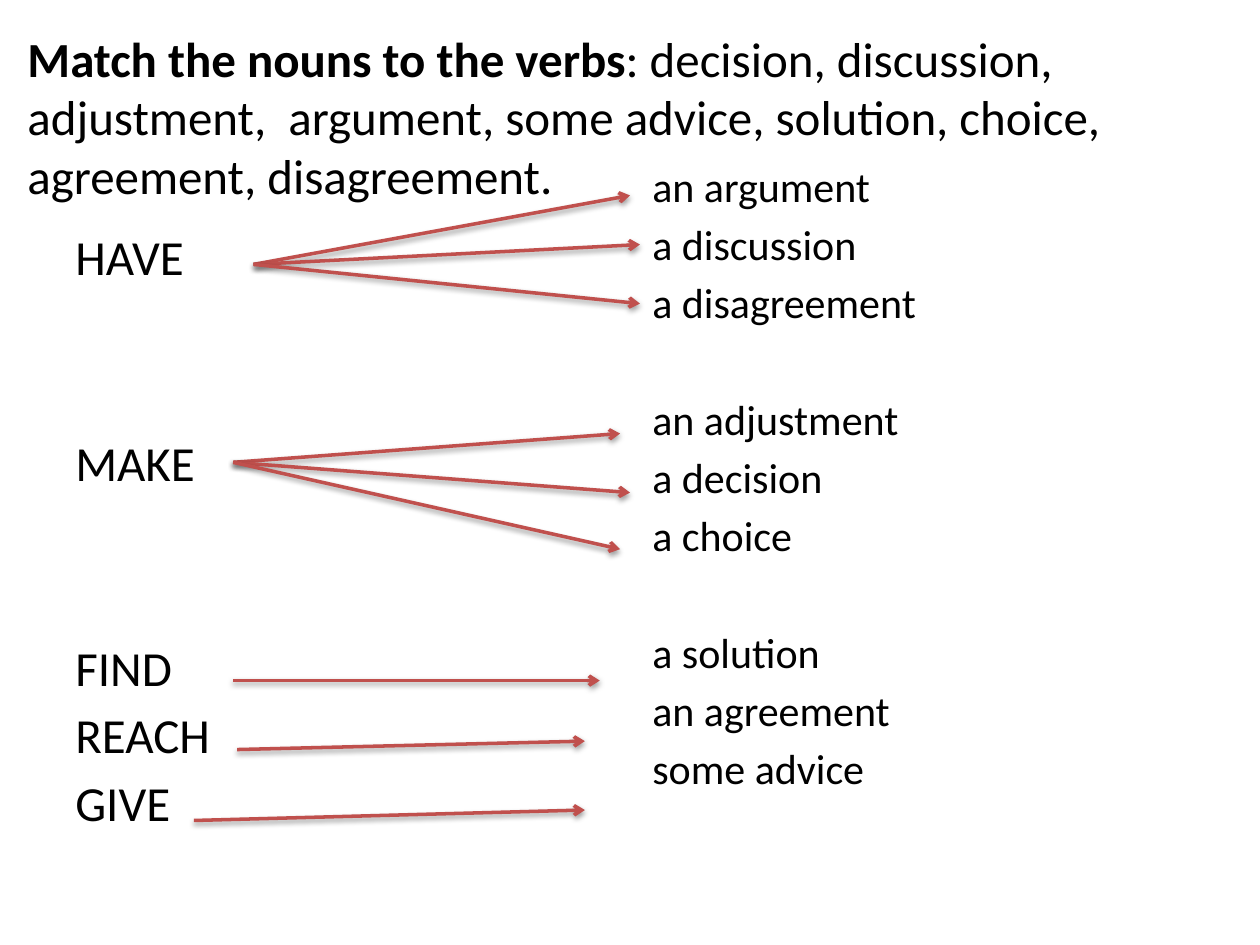
from lxml import etree
from pptx import Presentation
from pptx import util as u
from pptx.dml.color import RGBColor
from pptx.enum import shapes, text
from pptx.oxml import ns

BLACK = RGBColor(0x00, 0x00, 0x00)
RED = RGBColor(0xC0, 0x50, 0x4D)
FONT = "Calibri"
LINE_HEIGHT = 1.22  # Calibri line height relative to its size

TITLE_LEAD = "Match the nouns to the verbs"
TITLE_REST = (": decision, discussion, adjustment,  argument, some advice, "
              "solution, choice, agreement, disagreement.")

# Each inner list is a group; groups are set apart by empty line slots
VERBS = [["HAVE"], ["MAKE"], ["FIND", "REACH", "GIVE"]]
NOUNS = [["an argument", "a discussion", "a disagreement"],
         ["an adjustment", "a decision", "a choice"],
         ["a solution", "an agreement", "some advice"]]

# Start of each fan of arrows and its tips, in cm
ARROWS = [
    ((5.11, 5.33), [(12.7, 3.94), (12.9, 4.93), (12.9, 6.12)]),
    ((4.7, 9.32), [(12.5, 8.74), (12.7, 9.93), (12.5, 11.07)]),
    ((4.7, 13.72), [(12.09, 13.72)]),
    ((4.78, 15.11), [(11.79, 14.94)]),
    ((3.91, 16.54), [(11.79, 16.33)]),
]


def format_span(span, size, bold=False):
    span.font.name = FONT
    span.font.size = u.Pt(size)
    span.font.bold = bold
    span.font.color.rgb = BLACK


def place_title(page):
    title = page.shapes.title
    title.left, title.top = u.Cm(0.3), u.Cm(0.76)
    title.width, title.height = u.Cm(24.79), u.Cm(3.17)
    frame = title.text_frame
    frame.vertical_anchor = text.MSO_ANCHOR.MIDDLE
    para = frame.paragraphs[0]
    para.alignment = text.PP_ALIGN.LEFT
    for words, bold in ((TITLE_LEAD, True), (TITLE_REST, False)):
        span = para.add_run()
        span.text = words
        format_span(span, 28, bold)


def add_word_column(page, left, top, width, height, groups, size, spacing, slots):
    """Stack word groups, leaving a number of line slots between them."""
    box = page.shapes.add_textbox(u.Cm(left), u.Cm(top), u.Cm(width), u.Cm(height))
    frame = box.text_frame
    frame.word_wrap = True
    frame.text = "\n".join(word for group in groups for word in group)
    group_gap = spacing + slots * (size * LINE_HEIGHT + spacing)
    gaps = [spacing if i or group is groups[0] else group_gap
            for group in groups for i in range(len(group))]
    for para, gap in zip(frame.paragraphs, gaps):
        para.space_before = u.Pt(round(gap, 1))
        format_span(para.runs[0], size)


def add_arrow(page, start, tip):
    ends = [u.Cm(value) for value in (*start, *tip)]
    arrow = page.shapes.add_connector(shapes.MSO_CONNECTOR.STRAIGHT, *ends)
    arrow.line.color.rgb = RED
    arrow.line.width = u.Pt(2)
    # Arrowhead at the tip
    outline = arrow.line._get_or_add_ln()
    etree.SubElement(outline, ns.qn("a:tailEnd"), type="arrow")
    # Soft shadow just below the line
    effects = etree.SubElement(arrow._element.spPr, ns.qn("a:effectLst"))
    shadow = etree.SubElement(effects, ns.qn("a:outerShdw"), blurRad="40000",
                              dist="20000", dir="5400000", rotWithShape="0")
    color = etree.SubElement(shadow, ns.qn("a:srgbClr"), val=str(BLACK))
    etree.SubElement(color, ns.qn("a:alpha"), val="38000")


def main():
    deck = Presentation()
    deck.slide_width, deck.slide_height = u.Cm(25.4), u.Cm(19.05)
    page = deck.slides.add_slide(deck.slide_layouts[5])

    place_title(page)
    # Verbs on the left, nouns on the right
    add_word_column(page, 1.27, 4.45, 11.23, 13.28, VERBS, 28, 5.1, slots=2)
    add_word_column(page, 12.9, 3.12, 11.23, 15.4, NOUNS, 24, 4.3, slots=1)
    # Arrows from verbs to nouns
    for start, tips in ARROWS:
        for tip in tips:
            add_arrow(page, start, tip)

    deck.save("out.pptx")


if __name__ == "__main__":
    main()
